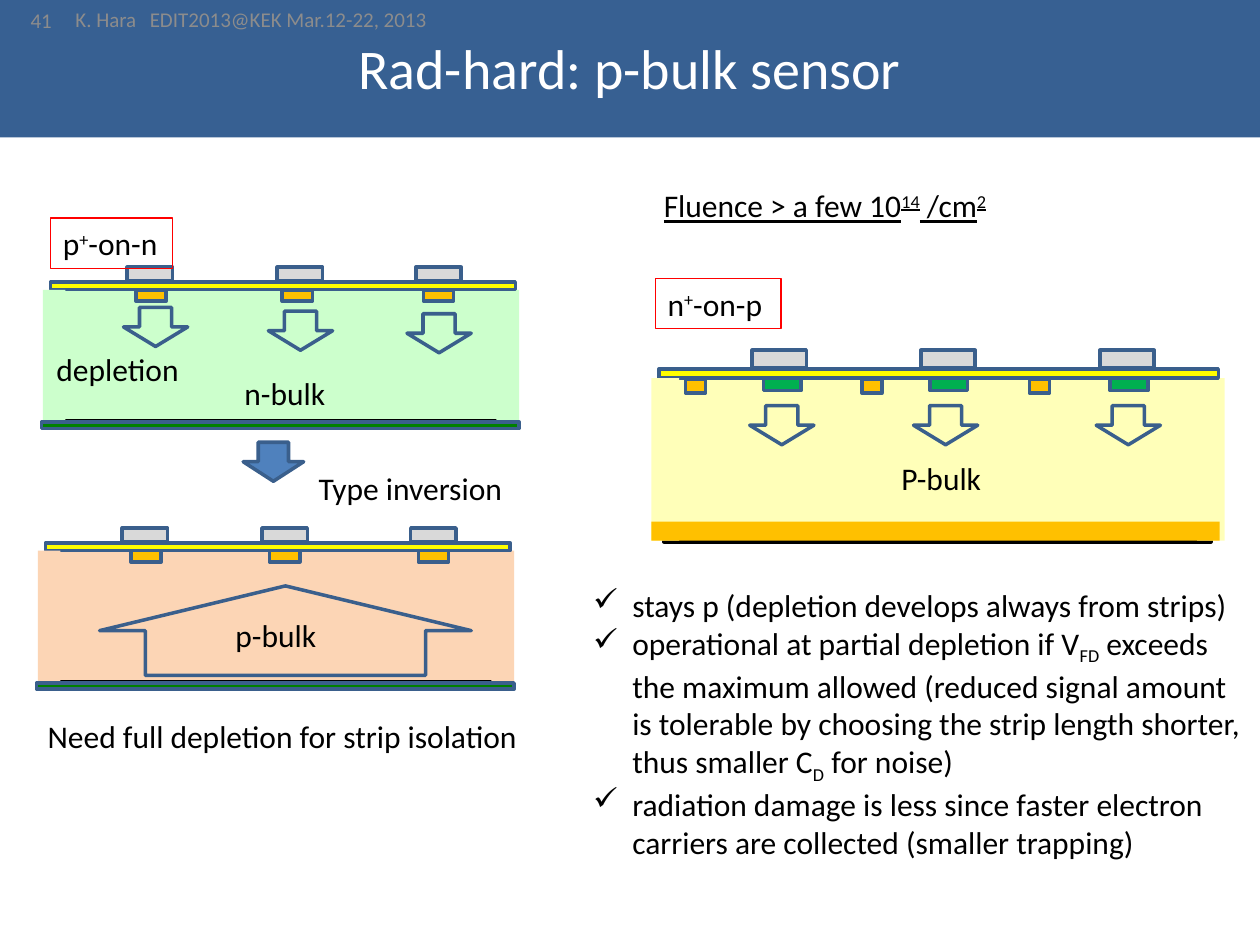
import pptx
import pptx.dml.color
import pptx.enum.shapes
import pptx.enum.text
import pptx.oxml.ns
import pptx.util
from lxml import etree

SCALE = 9144
RECT = pptx.enum.shapes.MSO_SHAPE.RECTANGLE
ARROW = pptx.enum.shapes.MSO_SHAPE.DOWN_ARROW
LEFT = pptx.enum.text.PP_ALIGN.LEFT
CENTER = pptx.enum.text.PP_ALIGN.CENTER
RIGHT = pptx.enum.text.PP_ALIGN.RIGHT
TOP = pptx.enum.text.MSO_ANCHOR.TOP
MIDDLE = pptx.enum.text.MSO_ANCHOR.MIDDLE

BLACK, WHITE, GRAY = "000000", "FFFFFF", "8C8C8C"
EDGE, RED, BLUE = "3A5F8C", "FF0000", "4F81BD"
YELLOW, ORANGE, GREEN, DARK_GREEN, METAL = "FFFF00", "FFC000", "00B050", "008000", "D9D9D9"
PALE_YELLOW, PALE_GREEN, PALE_ORANGE = "FFFFB9", "CCFFCC", "FCD5B5"


def px(n):
    return pptx.util.Emu(n * SCALE)


def rgb(value):
    return pptx.dml.color.RGBColor.from_string(value)


class Deck:
    """Holds the text style and the current slide, and draws each kind of element."""

    font = "Calibri"
    size = 18

    def __init__(self, prs):
        self.s = prs.slides.add_slide(prs.slide_layouts[6])

    def shape(self, x, y, w, h, fill=None, line=EDGE, weight=2, kind=RECT):
        sp = self.s.shapes.add_shape(kind, px(x), px(y), px(w), px(h))
        sp.shadow.inherit = False
        if fill:
            sp.fill.solid()
            sp.fill.fore_color.rgb = rgb(fill)
        else:
            sp.fill.background()
        if line:
            sp.line.color.rgb = rgb(line)
            sp.line.width = pptx.util.Pt(weight)
        else:
            sp.line.fill.background()
        return sp

    def arrow(self, x, y, w=51, h=31, fill=None):
        return self.shape(x, y, w, h, fill, kind=ARROW)

    def runs(self, p, parts, size, color, underline=None):
        for text, baseline in parts:
            r = p.add_run()
            r.text = text
            r.font.name = self.font
            r.font.size = pptx.util.Pt(size)
            r.font.color.rgb = rgb(color)
            r.font.underline = underline
            if baseline:
                r._r.get_or_add_rPr().set("baseline", str(baseline * 1000))

    def label(self, sp, parts, size=None, color=BLACK, align=LEFT, anchor=TOP, wrap=False, underline=None):
        tf = sp.text_frame
        tf.word_wrap = wrap
        tf.vertical_anchor = anchor
        p = tf.paragraphs[0]
        p.alignment = align
        self.runs(p, parts, size or self.size, color, underline)
        return p

    def text(self, x, y, w, h, parts, **style):
        sp = self.s.shapes.add_textbox(px(x), px(y), px(w), px(h))
        return self.label(sp, parts, **style)

    def tag(self, x, y, w, h, parts):
        self.label(self.shape(x, y, w, h, line=RED, weight=0.75), parts)

    def bulk(self, x, y, w, h, fill, name, drop, indent):
        sp = self.shape(x, y, w, h, fill, BLACK)
        sp.text_frame.margin_top = px(5 + drop)
        sp.text_frame.margin_left = px(10 + indent)
        self.label(sp, [(name, 0)], align=CENTER, anchor=MIDDLE, wrap=True)

    def checks(self, x, y, w, h, items):
        tf = self.s.shapes.add_textbox(px(x), px(y), px(w), px(h)).text_frame
        tf.word_wrap = True
        for i, parts in enumerate(items):
            p = tf.add_paragraph() if i else tf.paragraphs[0]
            pPr = p._p.get_or_add_pPr()
            pPr.set("marL", str(px(31)))
            pPr.set("indent", str(-px(31)))
            etree.SubElement(pPr, pptx.oxml.ns.qn("a:buChar")).set("char", "✓")
            self.runs(p, parts, self.size, BLACK)


def strip_on_n(deck, x, y, fill, name, drop, indent, implants, metals):
    deck.bulk(x + 9, y, 360, 105, fill, name, drop, indent)
    deck.shape(x + 360, y + 1, 18, 104, fill, None)
    for left in implants:
        deck.shape(left, y + 1, 24, 9, ORANGE)
    deck.shape(x + 6, y - 5, 369, 6, YELLOW)
    for left in metals:
        deck.shape(left, y - 17, 36, 11, METAL)
    deck.shape(x, y + 1, 18, 104, fill, None)
    deck.shape(x - 1, y + 106, 379, 5, DARK_GREEN)


def strip_on_p(deck):
    deck.bulk(527, 299, 434, 131, PALE_YELLOW, "P-bulk", 30, 6)
    deck.shape(950, 300, 22, 129, PALE_YELLOW, None)
    for left in (606, 738, 881):
        deck.shape(left, 299, 30, 11, GREEN)
    deck.shape(523, 293, 444, 7, YELLOW)
    for left in (597, 731, 873):
        deck.shape(left, 278, 43, 14, METAL)
    deck.shape(517, 300, 22, 129, PALE_YELLOW, None)
    deck.shape(517, 414, 451, 15, ORANGE, None)
    for left in (544, 684, 817):
        deck.shape(left, 301, 16, 11, ORANGE)
    for left in (595, 725, 870):
        deck.arrow(left, 322)
    deck.tag(520, 221, 100, 40, [("n", 0), ("+", 30), ("-on-p", 0)])


def main():
    prs = pptx.Presentation()
    prs.slide_width, prs.slide_height = px(1000), px(750)
    deck = Deck(prs)

    title = deck.shape(0, -3, 1000, 112, "376092", None)
    deck.label(title, [("Rad-hard: p-bulk sensor", 0)], size=32, color=WHITE,
               align=CENTER, anchor=MIDDLE, wrap=True)

    strip_on_p(deck)
    strip_on_n(deck, 34, 229, PALE_GREEN, "n-bulk", 61, 6, (108, 224, 336), (101, 220, 330))
    deck.tag(40, 173, 97, 40, [("p", 0), ("+", 30), ("-on-n", 0)])
    strip_on_n(deck, 30, 436, PALE_ORANGE, "p-bulk", 30, 0, (104, 214, 332), (97, 208, 326))

    deck.arrow(193, 351, 48, 31, BLUE)
    for left, top in ((98, 244), (213, 247), (323, 249)):
        deck.arrow(left, top)
    upward = deck.arrow(79, 465, 295, 71)
    upward.rotation = 180
    upward.adjustments[0] = 0.754

    deck.text(243, 367, 167, 40, [("Type inversion", 0)])
    deck.text(28, 564, 398, 40, [("Need full depletion for strip isolation", 0)])
    deck.text(35, 273, 124, 40, [("depletion", 0)])
    deck.text(517, 143, 283, 40, [("Fluence > a few 10", 0), ("14", 30), (" /cm", 0), ("2", 30)],
              underline=True)
    deck.checks(461, 460, 539, 222, [
        [("stays p (depletion develops always from strips)", 0)],
        [("operational at partial depletion if V", 0), ("FD", -25),
         (" exceeds the maximum allowed (reduced signal amount is tolerable by choosing "
          "the strip length shorter, thus smaller C", 0), ("D", -25), (" for noise)", 0)],
        [("radiation damage is less since faster electron carriers are collected "
          "(smaller trapping)", 0)],
    ])

    small = dict(size=12, color=GRAY, anchor=MIDDLE, wrap=True)
    deck.text(0, -4, 51, 40, [("41", 0)], align=RIGHT, **small)
    p = deck.text(50, 3, 362, 25, [("K. Hara\tEDIT2013@KEK Mar.12-22, 2013", 0)], **small)
    tabs = etree.SubElement(p._p.get_or_add_pPr(), pptx.oxml.ns.qn("a:tabLst"))
    tab = etree.SubElement(tabs, pptx.oxml.ns.qn("a:tab"))
    tab.set("pos", str(px(59)))
    tab.set("algn", "l")

    prs.save("out.pptx")


if __name__ == "__main__":
    main()
